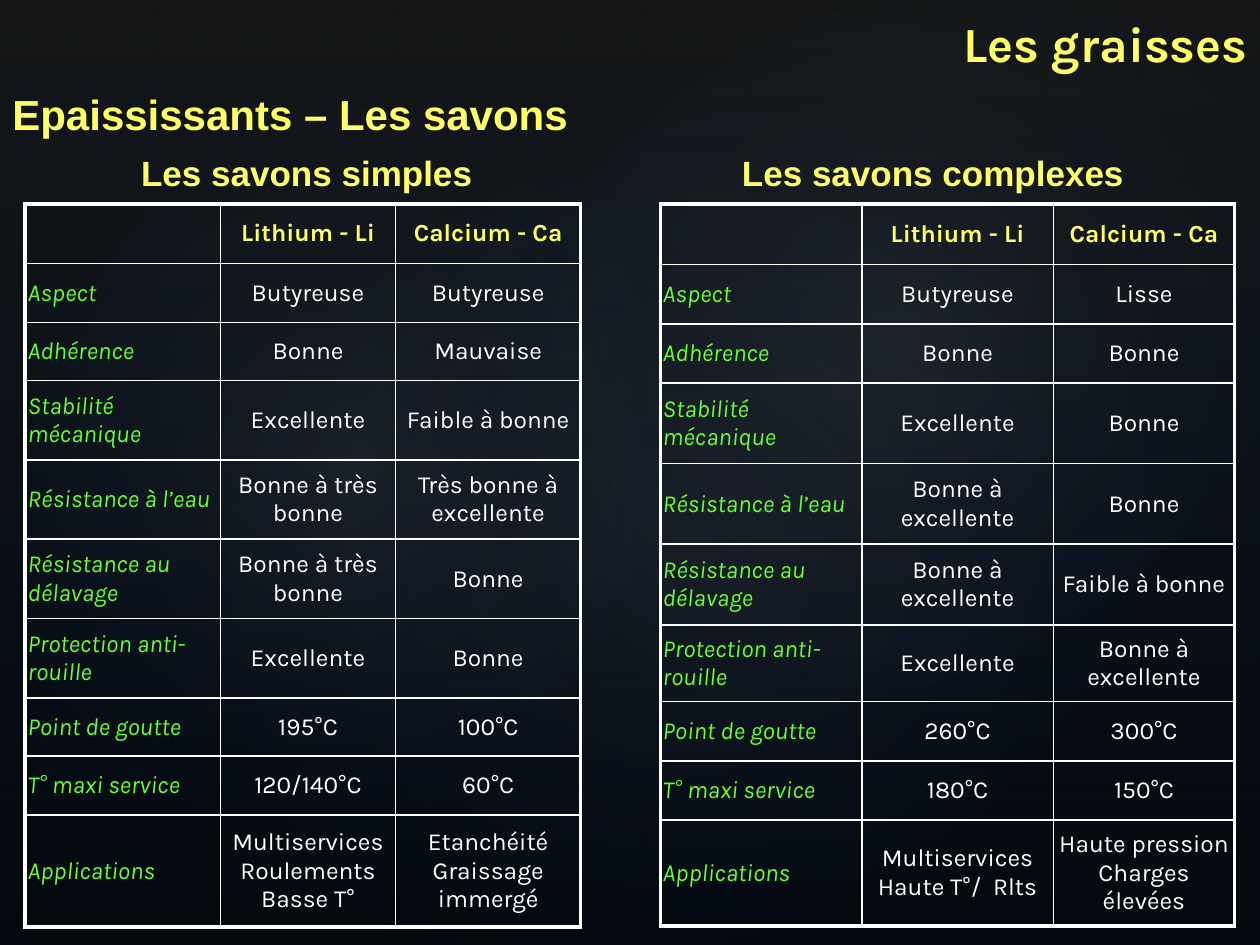
from lxml import etree
from pptx import Presentation, util as u
from pptx.dml.color import RGBColor
from pptx.enum import shapes, text
from pptx.oxml import parse_xml
from pptx.oxml.ns import nsdecls, qn

UNIT = u.Inches(0.1)
COLS, ROWS = 100, 75
YELLOW, GREEN, WHITE = "FFFF66", "66FF33", "FFFFFF"
THIN, THICK = 1, 2.25

LABELS = ["Aspect", "Adhérence", "Stabilité mécanique", "Résistance à l’eau",
          "Résistance au délavage", "Protection anti-rouille",
          "Point de goutte", "T° maxi service", "Applications"]
HEADS = ["", "Lithium - Li", "Calcium - Ca"]
SIMPLE = [
    ["Butyreuse", "Bonne", "Excellente", "Bonne à très bonne",
     "Bonne à très bonne", "Excellente", "195°C", "120/140°C",
     "Multiservices Roulements Basse T°"],
    ["Butyreuse", "Mauvaise", "Faible à bonne", "Très bonne à excellente",
     "Bonne", "Bonne", "100°C", "60°C", "Etanchéité Graissage immergé"],
]
COMPLEX = [
    ["Butyreuse", "Bonne", "Excellente", "Bonne à excellente",
     "Bonne à excellente", "Excellente", "260°C", "180°C",
     "Multiservices Haute T°/  Rlts"],
    ["Lisse", "Bonne", "Bonne", "Bonne", "Faible à bonne",
     "Bonne à excellente", "300°C", "150°C", "Haute pression Charges élevées"],
]


def size(n):
    return round(n * UNIT)


def color(code):
    return RGBColor.from_string(code)


def style(par, pts, face, code, side, bold=False, slant=False):
    par.alignment = side
    font = par.font
    font.size, font.name = u.Pt(pts), face
    font.bold, font.italic = bold, slant
    font.color.rgb = color(code)


def label(slide, box, words, pts, face, side):
    frame = slide.shapes.add_textbox(*map(size, box)).text_frame
    frame.word_wrap = True
    frame.vertical_anchor = text.MSO_ANCHOR.MIDDLE
    par = frame.paragraphs[0]
    par.text = words
    style(par, pts, face, YELLOW, side, bold=True)


def blend(slide, kind, box, turn, stops, shade):
    shape = slide.shapes.add_shape(kind, *map(size, box))
    shape.rotation = turn
    shape.shadow.inherit = False
    shape.line.fill.background()
    marks = "".join(
        f'<a:gs pos="{pos * 1000}"><a:srgbClr val="{code}">'
        f'<a:alpha val="{alpha * 1000}"/></a:srgbClr></a:gs>'
        for pos, code, alpha in stops)
    fill = parse_xml(f'<a:gradFill {nsdecls("a")} rotWithShape="1">'
                     f'<a:gsLst>{marks}</a:gsLst>{shade}</a:gradFill>')
    shape._element.spPr.find(qn("a:prstGeom")).addnext(fill)


def backdrop(slide):
    slide.background.fill.solid()
    slide.background.fill.fore_color.rgb = color("000000")
    blend(slide, shapes.MSO_SHAPE.RECTANGLE, (0, 0, COLS, ROWS), 0,
          [(0, "3B4042", 36), (100, "2F5897", 10)],
          '<a:lin ang="5400000" scaled="0"/>')
    glow = ('<a:path path="circle"><a:fillToRect l="50000" t="50000" '
            'r="50000" b="50000"/></a:path>')
    for box, turn, alpha in [((15, 11.4, 79.2, 62.4), 328.7, 7),
                             ((-3, 12.8, 60.6, 49), 294.3, 8),
                             ((35.8, 1.3, 70.9, 52), 328.7, 8)]:
        blend(slide, shapes.MSO_SHAPE.OVAL, box, turn,
              [(0, "ACB3B6", alpha), (58, "2F5897", 0)], glow)


def border(cell, edges):
    props = cell._tc.get_or_add_tcPr()
    for spot, (side, width) in enumerate(edges.items()):
        line = etree.Element(qn(f"a:ln{side}"), w=str(u.Pt(width)))
        fill = etree.SubElement(line, qn("a:solidFill"))
        etree.SubElement(fill, qn("a:srgbClr"), val=WHITE)
        props.insert(spot, line)


def grid(slide, left, top, wide, tall, data):
    rows = [HEADS, *zip(LABELS, *data)]
    frame = slide.shapes.add_table(len(rows), len(wide), size(left), size(top),
                                   size(sum(wide)), size(sum(tall)))
    table = frame.table
    table.first_row = table.horz_banding = False
    for col, width in zip(table.columns, wide):
        col.width = size(width)
    for row, height in zip(table.rows, tall):
        row.height = size(height)
    end, last = len(rows) - 1, len(wide) - 1
    for r, row in enumerate(rows):
        for c, words in enumerate(row):
            cell = table.cell(r, c)
            cell.fill.background()
            cell.vertical_anchor = text.MSO_ANCHOR.MIDDLE
            cell.margin_left = cell.margin_right = u.Inches(0.02)
            border(cell, {"L": THIN if c else THICK,
                          "R": THICK if c == last else THIN,
                          "T": THIN if r else THICK,
                          "B": THICK if r == end else THIN})
            par = cell.text_frame.paragraphs[0]
            par.text = words
            par.space_before = u.Pt(2.8)
            tone = YELLOW if r == 0 else WHITE if c else GREEN
            side = text.PP_ALIGN.CENTER if c else text.PP_ALIGN.LEFT
            style(par, 14, "Karla", tone, side, r == 0, r > 0 and c == 0)


def panel(slide, left, top, shift, title, wide, tall, data):
    label(slide, (left + shift, top, 43.3, 4.4), title, 20, "Arial",
          text.PP_ALIGN.CENTER)
    grid(slide, left, top + 4.7, wide, tall, data)


def header(slide):
    label(slide, (COLS - 29.5, 0, 29.5, 6.8), "Les graisses", 28, "Karla",
          text.PP_ALIGN.RIGHT)
    label(slide, (0, 6, COLS, 6), "Epaississants – Les savons", 24, "Arial",
          text.PP_ALIGN.LEFT)


def main():
    deck = Presentation()
    deck.slide_width, deck.slide_height = size(COLS), size(ROWS)
    slide = deck.slides.add_slide(deck.slide_layouts[6])
    backdrop(slide)
    panel(slide, 2, 11.5, 0.7, "Les savons simples", [15.5, 13.9, 14.7],
          [4.7, 4.7, 4.6] + [6.3] * 4 + [4.6, 4.7, 8.9], SIMPLE)
    panel(slide, 52.4, 11.5, 0, "Les savons complexes", [16, 15.2, 14.4],
          [4.8, 4.7, 4.7] + [6.4] * 3 + [6.1, 4.7, 4.7, 8.4], COMPLEX)
    header(slide)
    deck.save("out.pptx")


if __name__ == "__main__":
    main()
